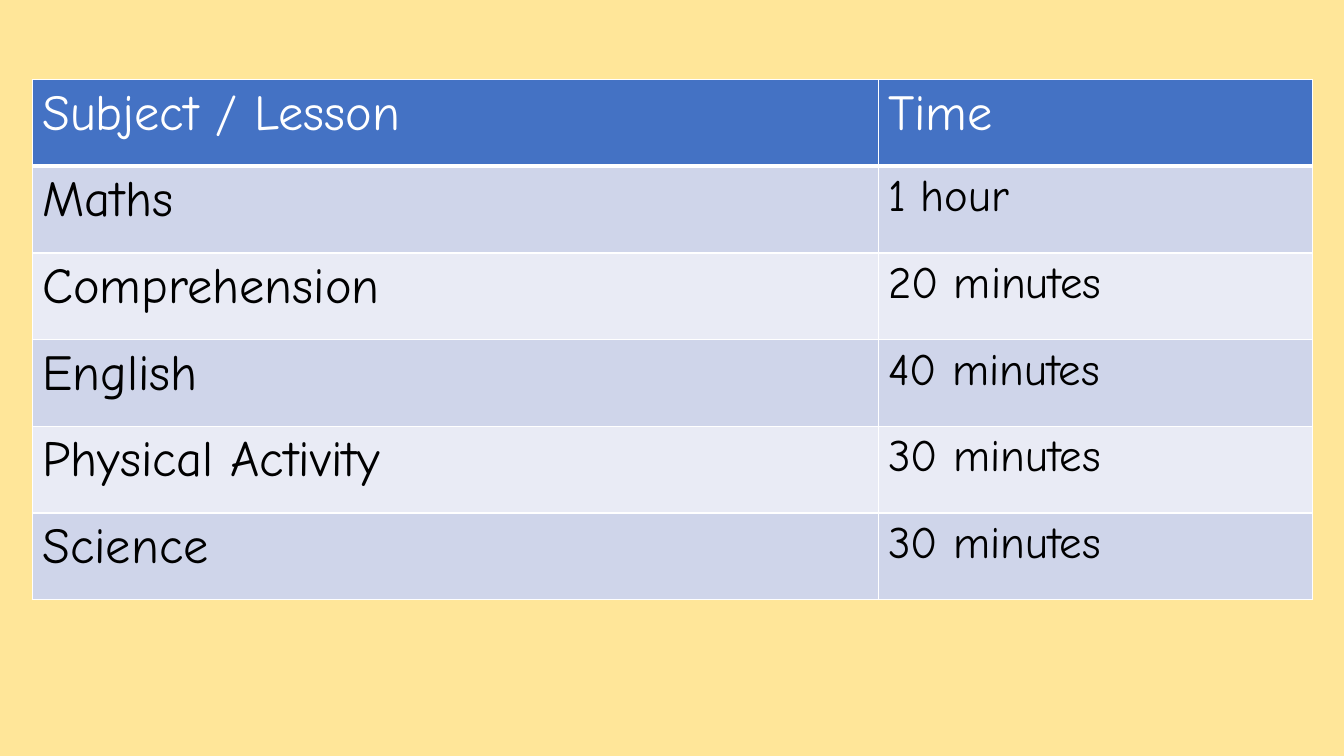
from typing import NamedTuple

from lxml.etree import SubElement
from pptx import Presentation
from pptx.dml.color import RGBColor
from pptx.oxml.ns import qn
from pptx.table import _Cell
from pptx.util import Inches, Pt

FONT = "Comic Neue"
WHITE, BLACK = "FFFFFF", "000000"
HEADER_FILL = "4472C4"
BAND_FILLS = ("E9EBF5", "CFD5EA")
COLUMN_WIDTHS = (8.39, 4.31)
ROW_HEIGHT = 0.86


class Lesson(NamedTuple):
    subject: str
    time: str


HEADER = Lesson("Subject / Lesson", "Time")
LESSONS = [
    Lesson("Maths", "1 hour"),
    Lesson("Comprehension", "20 minutes"),
    Lesson("English", "40 minutes"),
    Lesson("Physical Activity", "30 minutes"),
    Lesson("Science", "30 minutes"),
]


def rgb(value: str) -> RGBColor:
    return RGBColor.from_string(value)


def set_borders(cell: _Cell, bottom: float) -> None:
    """Draw white borders, 1 pt except for the given bottom width."""
    tcPr = cell._tc.get_or_add_tcPr()
    for side, width in (("L", 1), ("R", 1), ("T", 1), ("B", bottom)):
        ln = SubElement(tcPr, qn(f"a:ln{side}"), w=str(Pt(width)))
        SubElement(SubElement(ln, qn("a:solidFill")), qn("a:srgbClr"), val=WHITE)


def format_cell(cell: _Cell, text: str, size: float, color: str, fill: str,
                bottom: float) -> None:
    set_borders(cell, bottom)
    cell.fill.solid()
    cell.fill.fore_color.rgb = rgb(fill)
    cell.text = text
    font = cell.text_frame.paragraphs[0].font
    font.name = FONT
    font.size = Pt(size)
    font.bold = False
    font.color.rgb = rgb(color)


def add_timetable(slide) -> None:
    rows = [HEADER, *LESSONS]
    table = slide.shapes.add_table(
        len(rows), len(COLUMN_WIDTHS), Inches(0.32), Inches(0.79),
        Inches(sum(COLUMN_WIDTHS)), Inches(ROW_HEIGHT * len(rows))).table
    for column, width in zip(table.columns, COLUMN_WIDTHS):
        column.width = Inches(width)
    for i, lesson in enumerate(rows):
        table.rows[i].height = Inches(ROW_HEIGHT)
        is_header = i == 0
        color = WHITE if is_header else BLACK
        fill = HEADER_FILL if is_header else BAND_FILLS[i % 2]
        bottom = 3 if is_header else 1
        time_size = 36 if is_header else 32
        format_cell(table.cell(i, 0), lesson.subject, 36, color, fill, bottom)
        format_cell(table.cell(i, 1), lesson.time, time_size, color, fill, bottom)


def main() -> None:
    prs = Presentation()
    prs.slide_width, prs.slide_height = Inches(13.33), Inches(7.5)
    slide = prs.slides.add_slide(prs.slide_layouts[6])
    slide.background.fill.solid()
    slide.background.fill.fore_color.rgb = rgb("FFE699")
    add_timetable(slide)
    prs.save("out.pptx")


if __name__ == "__main__":
    main()
